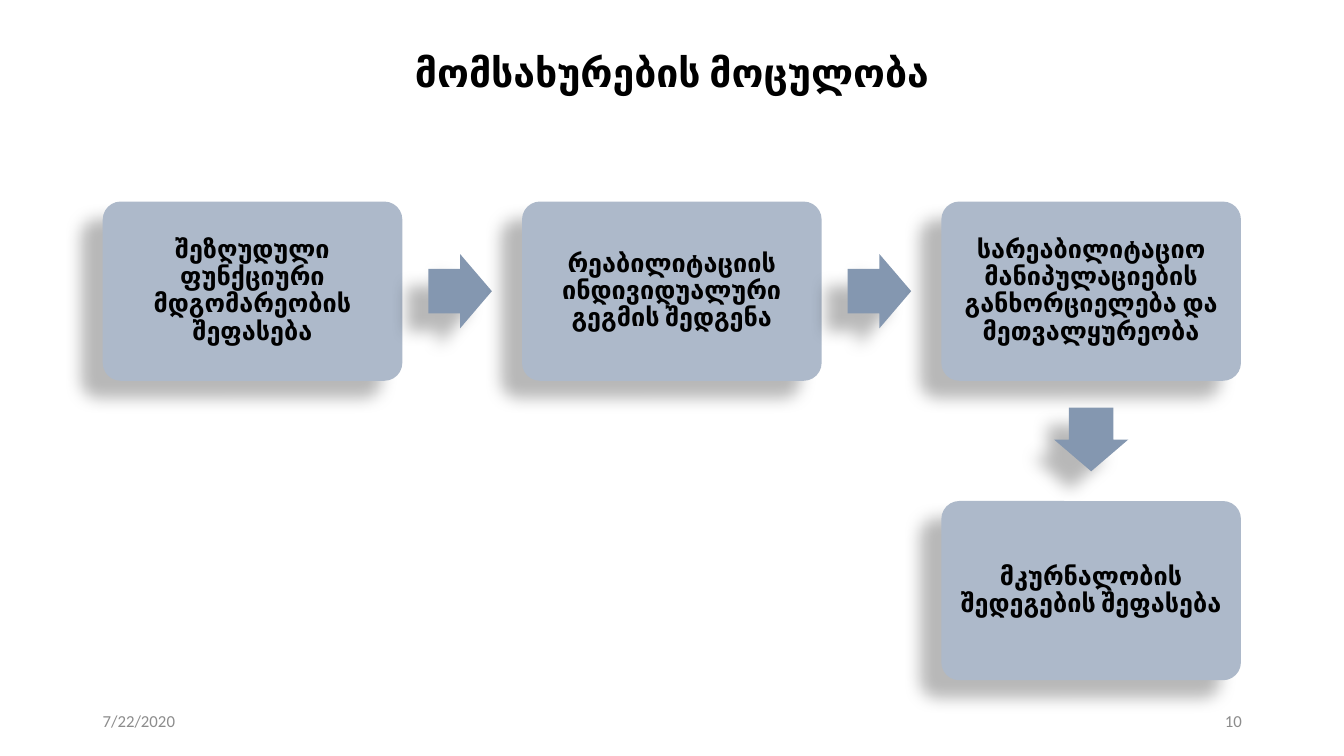
import dataclasses

import lxml.etree
import pptx
import pptx.dml.color
import pptx.enum.shapes
import pptx.enum.text
import pptx.oxml
import pptx.oxml.ns
import pptx.util

Pt = pptx.util.Pt
ALIGN = pptx.enum.text.PP_ALIGN
SHAPE = pptx.enum.shapes.MSO_SHAPE

LEFT, TOP = 73.4, 144
STEP_W, STEP_H = 214, 128
PITCH_X, PITCH_Y = 299.5, 213.9
ARROW_W, ARROW_H = 45.4, 53.1


@dataclasses.dataclass
class Step:
    text: str
    col: int
    row: int
    inset: float = 6.5

    @property
    def cx(self) -> float:
        return LEFT + self.col * PITCH_X + STEP_W / 2

    @property
    def cy(self) -> float:
        return TOP + self.row * PITCH_Y + STEP_H / 2


@dataclasses.dataclass
class Label:
    text: str
    box: tuple[float, float, float, float]
    size: float
    color: str
    bold: bool
    align: ALIGN


STEPS = [
    Step("შეზღუდული ფუნქციური მდგომარეობის შეფასება", 0, 0, 5),
    Step("რეაბილიტაციის ინდივიდუალური გეგმის შედგენა", 1, 0),
    Step("სარეაბილიტაციო მანიპულაციების განხორციელება და მეთვალყურეობა", 2, 0),
    Step("მკურნალობის შედეგების შეფასება", 2, 1),
]

LABELS = [
    Label("მომსახურების მოცულობა", (50.4, 31.7, 859, 43.9), 28, "000000", True, ALIGN.CENTER),
    Label("7/22/2020", (66.2, 500.4, 216, 28.8), 12, "8C8C8C", False, ALIGN.LEFT),
    Label("10", (678.2, 500.4, 216, 28.8), 12, "8C8C8C", False, ALIGN.RIGHT),
]


def rgb(color: str) -> pptx.dml.color.RGBColor:
    return pptx.dml.color.RGBColor.from_string(color)


def write(sp, text: str, *, size: float, color: str = "000000", bold: bool = True,
          align: ALIGN = ALIGN.CENTER, spacing: float = 0.9) -> None:
    tf = sp.text_frame
    tf.word_wrap = True
    tf.vertical_anchor = pptx.enum.text.MSO_ANCHOR.MIDDLE
    p = tf.paragraphs[0]
    p.alignment = align
    p.line_spacing = spacing
    r = p.add_run()
    r.text = text
    r.font.name = "Calibri"
    r.font.size = Pt(size)
    r.font.bold = bold
    r.font.color.rgb = rgb(color)


def add_shadow(sp) -> None:
    sp.shadow.inherit = False
    effects = sp._element.spPr.find(pptx.oxml.ns.qn("a:effectLst"))
    effects.append(pptx.oxml.parse_xml(
        f'<a:outerShdw {pptx.oxml.ns.nsdecls("a")} blurRad="{Pt(11.8)}" '
        f'dist="{Pt(19.7)}" dir="{141 * 60000}" algn="ctr" rotWithShape="0">'
        '<a:srgbClr val="000000"><a:alpha val="28000"/></a:srgbClr></a:outerShdw>'))


def add_block(s, kind: SHAPE, cx: float, cy: float, w: float, h: float,
              fill: str, adjustments: list[float]):
    sp = s.shapes.add_shape(kind, Pt(cx - w / 2), Pt(cy - h / 2), Pt(w), Pt(h))
    for i, value in enumerate(adjustments):
        sp.adjustments[i] = value
    sp.fill.solid()
    sp.fill.fore_color.rgb = rgb(fill)
    sp.line.fill.background()
    add_shadow(sp)
    return sp


def add_step(s, step: Step) -> None:
    sp = add_block(s, SHAPE.ROUNDED_RECTANGLE, step.cx, step.cy, STEP_W, STEP_H, "ADB9CA", [0.1])
    tf = sp.text_frame
    tf.margin_left = tf.margin_right = Pt(step.inset)
    tf.margin_top = tf.margin_bottom = Pt(step.inset)
    write(sp, step.text, size=18)


def add_arrow(s, start: Step, end: Step) -> None:
    down = start.col == end.col
    cx = start.cx if down else (start.cx + end.cx) / 2 - 1.5
    cy = (start.cy + end.cy) / 2 - 1 if down else start.cy
    sp = add_block(s, SHAPE.RIGHT_ARROW, cx, cy, ARROW_W, ARROW_H, "8497B0", [0.6, 0.5])
    sp.rotation = 90 if down else 0


def add_label(s, label: Label) -> None:
    sp = s.shapes.add_textbox(*map(Pt, label.box))
    write(sp, label.text, size=label.size, color=label.color, bold=label.bold, align=label.align,
          spacing=0.9 if label.bold else 1.0)


def main() -> None:
    prs = pptx.Presentation()
    prs.slide_width, prs.slide_height = Pt(960), Pt(540)
    s = prs.slides.add_slide(prs.slide_layouts[6])
    for i, step in enumerate(STEPS):
        if i:
            add_arrow(s, STEPS[i - 1], step)
        add_step(s, step)
    for label in LABELS:
        add_label(s, label)
    prs.save("out.pptx")


if __name__ == "__main__":
    main()
